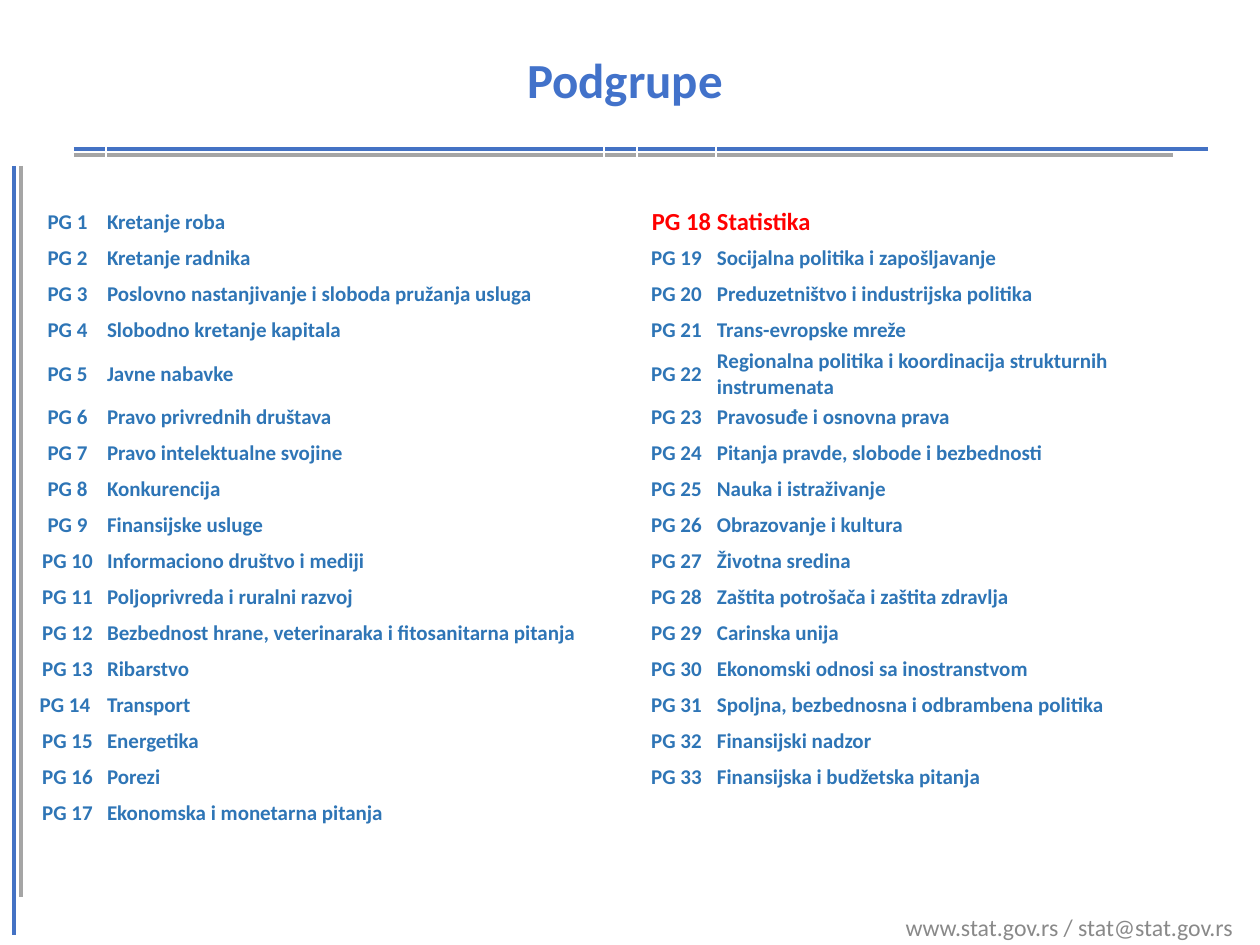
from lxml import etree
from pptx import Presentation
from pptx.dml.color import RGBColor
from pptx.enum.shapes import MSO_CONNECTOR
from pptx.enum.text import MSO_ANCHOR, PP_ALIGN
from pptx.oxml.ns import qn
from pptx.util import Emu, Pt

STRAIGHT = MSO_CONNECTOR.STRAIGHT
MIDDLE = MSO_ANCHOR.MIDDLE
LEFT, CENTER, RIGHT = PP_ALIGN.LEFT, PP_ALIGN.CENTER, PP_ALIGN.RIGHT

BLUE = RGBColor(0x44, 0x72, 0xC4)
GRAY = RGBColor(0xA5, 0xA5, 0xA5)
TITLE = RGBColor(0x42, 0x72, 0xCA)
TEXT = RGBColor(0x2E, 0x75, 0xB6)
RED = RGBColor(0xFF, 0x00, 0x00)
FOOT = RGBColor(0x89, 0x89, 0x89)

SCALE = 914400 / 126
FONT = "Calibri"
RULES = [
    (14, 166, 14, 935, BLUE),
    (21, 166, 21, 897, GRAY),
    (74, 149, 1208, 149, BLUE),
    (74, 155, 1173, 155, GRAY),
]
COLS = [77, 498, 33, 79, 507]
HEAD, ROW = 76, 36
SPLIT = 17
KEY = 18
GROUPS = [
    "Kretanje roba",
    "Kretanje radnika",
    "Poslovno nastanjivanje i sloboda pružanja usluga",
    "Slobodno kretanje kapitala",
    "Javne nabavke",
    "Pravo privrednih društava",
    "Pravo intelektualne svojine",
    "Konkurencija",
    "Finansijske usluge",
    "Informaciono društvo i mediji",
    "Poljoprivreda i ruralni razvoj",
    "Bezbednost hrane, veterinaraka i fitosanitarna pitanja",
    "Ribarstvo",
    "Transport",
    "Energetika",
    "Porezi",
    "Ekonomska i monetarna pitanja",
    "Statistika",
    "Socijalna politika i zapošljavanje",
    "Preduzetništvo i industrijska politika",
    "Trans-evropske mreže",
    "Regionalna politika i koordinacija strukturnih instrumenata",
    "Pravosuđe i osnovna prava",
    "Pitanja pravde, slobode i bezbednosti",
    "Nauka i istraživanje",
    "Obrazovanje i kultura",
    "Životna sredina",
    "Zaštita potrošača i zaštita zdravlja",
    "Carinska unija",
    "Ekonomski odnosi sa inostranstvom",
    "Spoljna, bezbednosna i odbrambena politika",
    "Finansijski nadzor",
    "Finansijska i budžetska pitanja",
]


def px(count):
    """Turn pixels into EMU."""
    return Emu(round(count * SCALE))


def style(para, size, color, align, bold=False):
    """Set the font and alignment of a paragraph."""
    para.alignment = align
    font = para.font
    font.name, font.size, font.bold = FONT, Pt(size), bold
    font.color.rgb = color


def add_rule(slide, x1, y1, x2, y2, color):
    """Draw a straight rule without a shadow."""
    rule = slide.shapes.add_connector(STRAIGHT, px(x1), px(y1), px(x2), px(y2))
    rule.line.color.rgb = color
    rule.line.width = Pt(1.75)
    etree.SubElement(rule._element.spPr, qn("a:effectLst"))


def add_foot(slide, text):
    """Add the contact line at the bottom right."""
    box = slide.shapes.add_textbox(px(819), px(907), px(426), px(38))
    box.text_frame.word_wrap = True
    para = box.text_frame.paragraphs[0]
    para.text = text
    style(para, 13.6, FOOT, RIGHT)


def set_title(slide, text):
    """Place and format the title."""
    title = slide.shapes.title
    title.left, title.top, title.width, title.height = px(32), px(20), px(1197), px(126)
    title.text_frame.vertical_anchor = MIDDLE
    para = title.text_frame.paragraphs[0]
    para.text = text
    para.line_spacing = 0.9
    style(para, 28, TITLE, CENTER, True)


def set_border(cell):
    """Give a cell thin white borders on all sides."""
    props = cell._tc.get_or_add_tcPr()
    for index, side in enumerate(("lnL", "lnR", "lnT", "lnB")):
        line = etree.Element(qn(f"a:{side}"), w=str(Pt(1)))
        fill = etree.SubElement(line, qn("a:solidFill"))
        etree.SubElement(fill, qn("a:srgbClr"), val="FFFFFF")
        props.insert(index, line)


def clear_cell(cell):
    """Make a cell plain, tight and small enough for its row."""
    cell.fill.background()
    set_border(cell)
    cell.vertical_anchor = MIDDLE
    cell.margin_left = cell.margin_right = cell.margin_top = px(1)
    cell.margin_bottom = 0
    para = cell.text_frame.paragraphs[0]
    etree.SubElement(para._p, qn("a:endParaRPr"), sz="1200")


def fill_cell(cell, text, align, key):
    """Write one cell, larger and red for the key group."""
    para = cell.text_frame.paragraphs[0]
    para.text = text
    style(para, 14 if key else 12, RED if key else TEXT, align, True)


def add_groups(slide):
    """Add the table of numbered groups in two halves."""
    high = HEAD + SPLIT * ROW
    frame = slide.shapes.add_table(
        SPLIT + 1, len(COLS), px(29), px(128), px(sum(COLS)), px(high)
    )
    table = frame.table
    table.first_row = table.horz_banding = False
    for col, width in zip(table.columns, COLS):
        col.width = px(width)
    for index, row in enumerate(table.rows):
        row.height = px(ROW if index else HEAD)
    for cell in table.iter_cells():
        clear_cell(cell)
    for index, name in enumerate(GROUPS):
        half, row = divmod(index, SPLIT)
        num = index + 1
        code = table.cell(row + 1, half * 3)
        fill_cell(code, f"PG {num}", CENTER, num == KEY)
        fill_cell(table.cell(row + 1, half * 3 + 1), name, LEFT, num == KEY)
        if num == KEY:
            code.margin_left = px(11)
        elif num == 14:
            code.margin_right = px(6)


def main():
    """Build and save the slide."""
    deck = Presentation()
    deck.slide_width, deck.slide_height = px(1260), px(945)
    slide = deck.slides.add_slide(deck.slide_layouts[5])
    add_foot(slide, "www.stat.gov.rs / stat@stat.gov.rs")
    for rule in RULES:
        add_rule(slide, *rule)
    set_title(slide, "Podgrupe ")
    add_groups(slide)
    deck.save("out.pptx")


if __name__ == "__main__":
    main()
